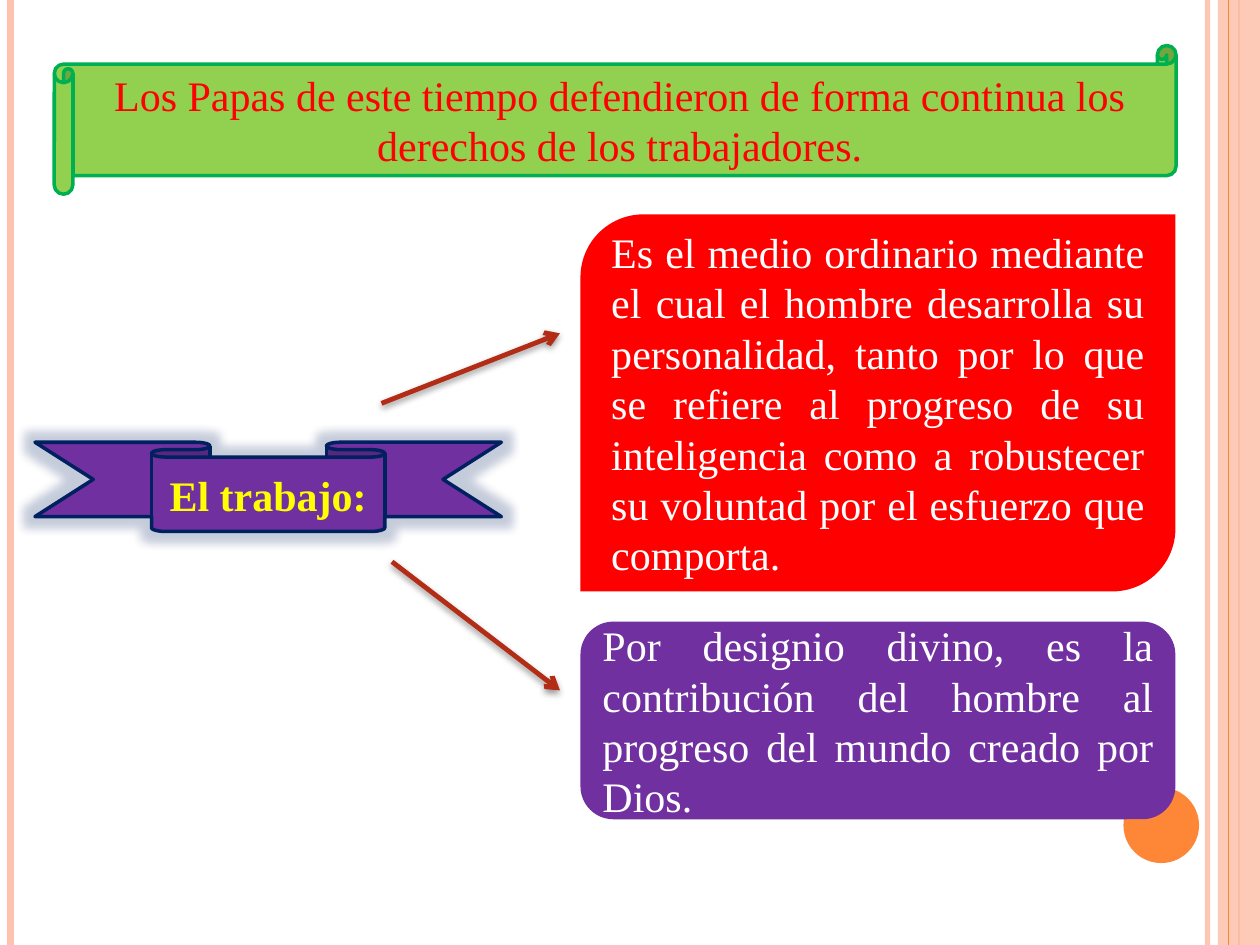
from lxml.etree import SubElement
from pptx import Presentation
from pptx.dml.color import RGBColor
from pptx.enum.shapes import MSO_CONNECTOR, MSO_SHAPE
from pptx.enum.text import MSO_ANCHOR, PP_ALIGN
from pptx.oxml.ns import qn
from pptx.util import Pt

PEACH, ORANGE, PURPLE = "FEC3AE", "FE8637", "7030A0"


def color(value):
    return RGBColor.from_string(value)


def set_alpha(fill, percent):
    """Make a solid fill partly transparent."""
    for node in fill._xPr.iter(qn("a:srgbClr")):
        SubElement(node, qn("a:alpha"), val=str(percent * 1000))


def add_effect(effects, kind, tint, percent, **settings):
    values = {name: str(int(value)) for name, value in settings.items()}
    effect = SubElement(effects, qn(f"a:{kind}"), values)
    node = SubElement(effect, qn("a:srgbClr"), val=tint)
    SubElement(node, qn("a:alpha"), val=str(percent * 1000))


def add_box(page, kind, box, fill, line=None):
    shape = page.shapes.add_shape(kind, *map(Pt, box))
    shape.shadow.inherit = False
    shape.fill.solid()
    shape.fill.fore_color.rgb = color(fill)
    if line:
        shape.line.color.rgb = color(line)
        shape.line.width = Pt(2)
    else:
        shape.line.fill.background()
    return shape


def add_text(shape, text, tint="FFFFFF", align=PP_ALIGN.JUSTIFY, bold=False):
    frame = shape.text_frame
    frame.word_wrap = True
    frame.vertical_anchor = MSO_ANCHOR.MIDDLE
    para = frame.paragraphs[0]
    para.alignment = align
    span = para.add_run()
    span.text = text
    span.font.name = "Times New Roman"
    span.font.size = Pt(24)
    span.font.bold = bold
    span.font.color.rgb = color(tint)


def add_line(page, start, end, tint, width):
    """Draw a straight line; return it with its empty effect list."""
    line = page.shapes.add_connector(
        MSO_CONNECTOR.STRAIGHT, *map(Pt, (*start, *end)))
    line.line.color.rgb = color(tint)
    line.line.width = Pt(width)
    effects = SubElement(line._element.spPr, qn("a:effectLst"))
    return line, effects


def add_arrow(page, start, end):
    arrow, effects = add_line(page, start, end, "B32C16", 2.75)
    SubElement(arrow.line._get_or_add_ln(), qn("a:tailEnd"), type="arrow")
    add_effect(effects, "outerShdw", "000000", 42,
               blurRad=Pt(4), dist=Pt(1.6), dir=90 * 60000, rotWithShape=0)


def add_frame(page, box):
    """Side stripes and the corner disc."""
    left, top, width, height = box
    right, bottom = left + width, top + height

    def stripe(x, tint, weight):
        return add_line(page, (x, top), (x, bottom), tint, weight)[0]

    set_alpha(stripe(right - 30, PEACH, 3).line.fill, 93)
    stripe(left + 6, PEACH, 4.5)
    stripe(right - 12, ORANGE, 1.5)
    band = add_box(page, MSO_SHAPE.RECTANGLE, (right - 24, top, 24, height), PEACH)
    set_alpha(band.fill, 87)
    stripe(right - 18, ORANGE, 0.75)
    add_box(page, MSO_SHAPE.OVAL, (right - 78, bottom - 90, 43.2, 43.2), ORANGE)


def add_banner(page, box):
    """Scroll with the main statement."""
    scroll = add_box(page, MSO_SHAPE.HORIZONTAL_SCROLL, box, "92D050", "00B050")
    add_text(scroll, "Los Papas de este tiempo defendieron de forma continua "
             "los derechos de los trabajadores.", tint="FF0000", align=PP_ALIGN.CENTER)


def add_topic(page, box):
    """Glowing ribbon that names the topic."""
    ribbon = add_box(page, MSO_SHAPE.DOWN_RIBBON, box, PURPLE, "002060")
    add_effect(ribbon._element.spPr.find(qn("a:effectLst")), "glow",
               "002060", 23, rad=Pt(11))
    add_text(ribbon, "El trabajo:", tint="FFFF00", align=PP_ALIGN.CENTER, bold=True)


def add_ideas(page, box):
    """Two statements, one above the other."""
    left, top, width, height = box
    upper, lower = 215.5, 113
    first = add_box(page, MSO_SHAPE.ROUND_2_DIAG_RECTANGLE,
                    (left, top, width, upper), "FF0000")
    add_text(first, "Es el medio ordinario mediante el cual el hombre desarrolla su "
             "personalidad, tanto por lo que se refiere al progreso de su inteligencia "
             "como a robustecer su voluntad por el esfuerzo que comporta.")
    second = add_box(page, MSO_SHAPE.FLOWCHART_ALTERNATE_PROCESS,
                     (left, top + height - lower, width, lower), PURPLE)
    add_text(second, "Por designio divino, es la contribución del hombre al progreso "
             "del mundo creado por Dios.")


def main():
    deck = Presentation()
    deck.slide_width, deck.slide_height = Pt(720), Pt(540)
    page = deck.slides.add_slide(deck.slide_layouts[6])
    add_frame(page, (0, 0, 720, 540))
    add_banner(page, (31, 26, 641, 85))
    add_topic(page, (20, 252.7, 266.5, 51))
    add_ideas(page, (331.7, 122.5, 340, 345.7))
    # Arrows from the topic to each statement
    add_arrow(page, (218, 230.5), (320, 190.5))
    add_arrow(page, (224, 321), (320, 394.5))
    deck.save("out.pptx")


if __name__ == "__main__":
    main()
